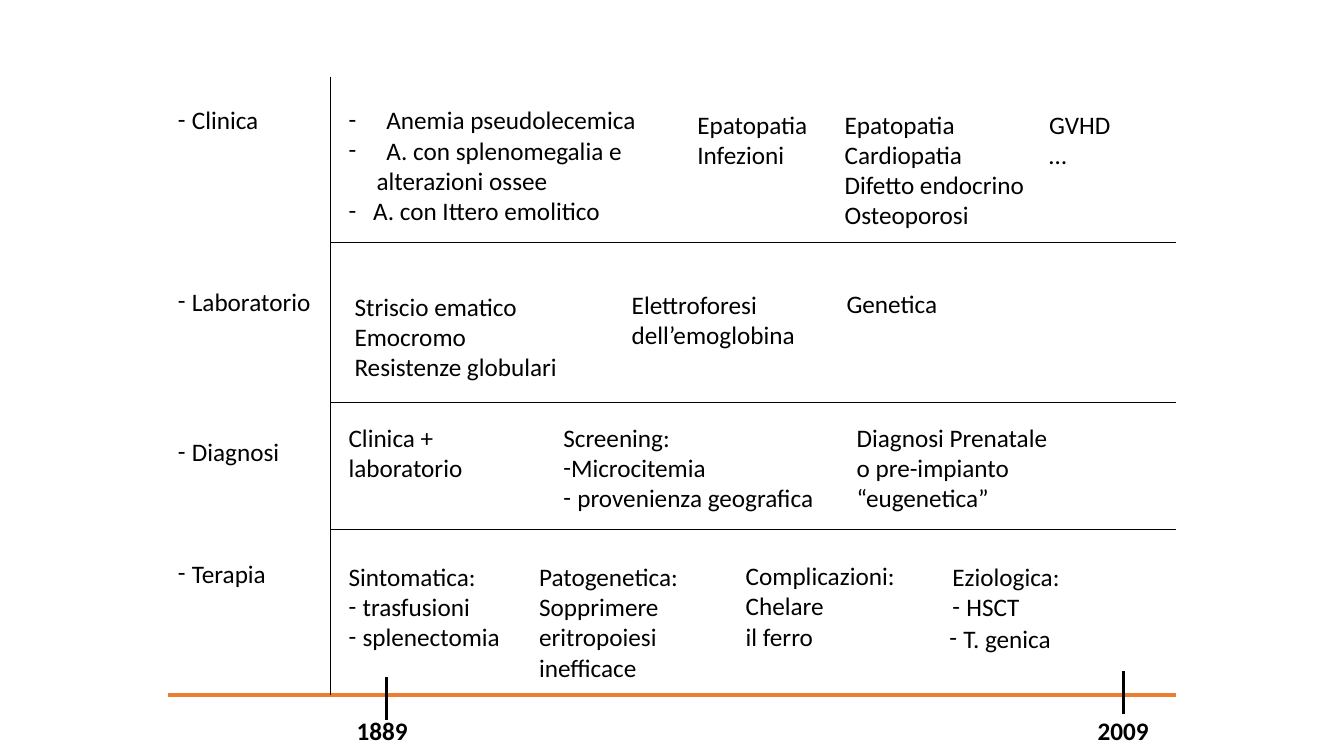
from lxml import etree
from pptx import Presentation
from pptx.dml.color import RGBColor
from pptx.enum import shapes, text
from pptx.oxml import ns
from pptx.util import Pt

COLORS = {"ink": "000000", "timeline": "ED7D31"}
FONT = "Calibri"
SIZE = 18
LINE_HEIGHT = 21.8
PADDING = 7.2
DASH = 10
AXIS_X, LEFT, RIGHT = 236.2, 120, 840
LABEL_WIDTH = 114
TIMELINE_Y = 496.3
DIVIDERS = [173.5, 287.3, 378]

ROW_LABELS = [
    ("Clinica", 71.3),
    ("Laboratorio", 200.9),
    ("Diagnosi", 308.4),
    ("Terapia", 394.9),
]

NOTES = [
    (241.9, 71.3, 221.8, [
        ("Anemia pseudolecemica", 27, True),
        ("A. con splenomegalia e", 27, True),
        ("alterazioni ossee", 20, False),
        ("A. con Ittero emolitico", 17.5, True),
    ]),
    (491, 74.2, 94.3, ["Epatopatia", "Infezioni"]),
    (596.2, 74.2, 144.7,
     ["Epatopatia", "Cardiopatia", "Difetto endocrino", "Osteoporosi"]),
    (742.3, 74.2, 59, ["GVHD", "…"]),
    (246.2, 204.5, 160.6,
     ["Striscio ematico", "Emocromo", "Resistenze globulari"]),
    (444.2, 203, 132.5, ["Elettroforesi", "dell’emoglobina"]),
    (597.6, 202.3, 79.9, ["Genetica"]),
    (241.9, 298.1, 99.4, ["Clinica +", "laboratorio"]),
    (395.3, 298.1, 195.1, [
        "Screening:",
        ("Microcitemia", 5.5, True),
        ("provenienza geografica", DASH, True),
    ]),
    (604.8, 298.1, 151.9,
     ["Diagnosi Prenatale", "o pre-impianto", "“eugenetica”"]),
    (241.9, 397.4, 123.1, [
        "Sintomatica:",
        ("trasfusioni", DASH, True),
        ("splenectomia", DASH, True),
    ]),
    (378, 397.4, 115.2,
     ["Patogenetica:", "Sopprimere", "eritropoiesi", "inefficace"]),
    (525.6, 396.7, 122.4, ["Complicazioni:", "Chelare", "il ferro"]),
    (673.2, 397.4, 92.2, ["Eziologica:", ("HSCT", DASH, True)]),
    (671, 441.4, 87.8, [("T. genica", DASH, True)]),
]

YEARS = [("1889", 247.7, 275.8, 483.8), ("2009", 776.9, 802.8, 479.5)]


def add_line(s, x1, y1, x2, y2, width, color="ink"):
    """Draw a straight line without a shadow."""
    line = s.shapes.add_connector(
        shapes.MSO_CONNECTOR.STRAIGHT, Pt(x1), Pt(y1), Pt(x2), Pt(y2))
    line.line.width = Pt(width)
    line.line.color.rgb = RGBColor.from_string(COLORS[color])
    etree.SubElement(line._element.spPr, ns.qn("a:effectLst"))


def indent(p, margin, dashed):
    """Indent a paragraph, hanging a dash in the margin if asked."""
    pPr = p._p.get_or_add_pPr()
    pPr.set("marL", str(Pt(margin)))
    if dashed:
        pPr.set("indent", str(-Pt(margin)))
        etree.SubElement(pPr, ns.qn("a:buFont")).set("typeface", FONT)
        etree.SubElement(pPr, ns.qn("a:buChar")).set("char", "-")


def add_note(s, x, y, width, lines, bold=False, wrap=False):
    """Add a text box with one paragraph per line."""
    height = len(lines) * LINE_HEIGHT + PADDING
    tf = s.shapes.add_textbox(Pt(x), Pt(y), Pt(width), Pt(height)).text_frame
    tf.word_wrap = wrap
    tf.auto_size = text.MSO_AUTO_SIZE.SHAPE_TO_FIT_TEXT
    for i, line in enumerate(lines):
        p = tf.add_paragraph() if i else tf.paragraphs[0]
        if isinstance(line, tuple):
            p.text, margin, dashed = line
            indent(p, margin, dashed)
        else:
            p.text = line
        for r in p.runs:
            r.font.name = FONT
            r.font.size = Pt(SIZE)
            r.font.bold = bold
            r.font.color.rgb = RGBColor.from_string(COLORS["ink"])


def add_year(s, year, x, tick_x, tick_y):
    """Mark a year on the timeline with a tick and a bold label."""
    add_line(s, tick_x, tick_y, tick_x, tick_y + 30.2, 2.25)
    add_note(s, x, 507.6, 51.1, [year], bold=True)


def main():
    """Build the slide and save it."""
    prs = Presentation()
    prs.slide_width, prs.slide_height = Pt(960), Pt(540)
    s = prs.slides.add_slide(prs.slide_layouts[6])
    add_line(s, LEFT, TIMELINE_Y, RIGHT, TIMELINE_Y, 3, "timeline")
    for year in YEARS:
        add_year(s, *year)
    add_line(s, AXIS_X, 54.7, AXIS_X, TIMELINE_Y, 0.75)
    for y in DIVIDERS:
        add_line(s, AXIS_X, y, RIGHT, y, 0.75)
    for label, y in ROW_LABELS:
        add_note(s, LEFT, y, LABEL_WIDTH, [(label, DASH, True)], wrap=True)
    for note in NOTES:
        add_note(s, *note)
    prs.save("out.pptx")


if __name__ == "__main__":
    main()
